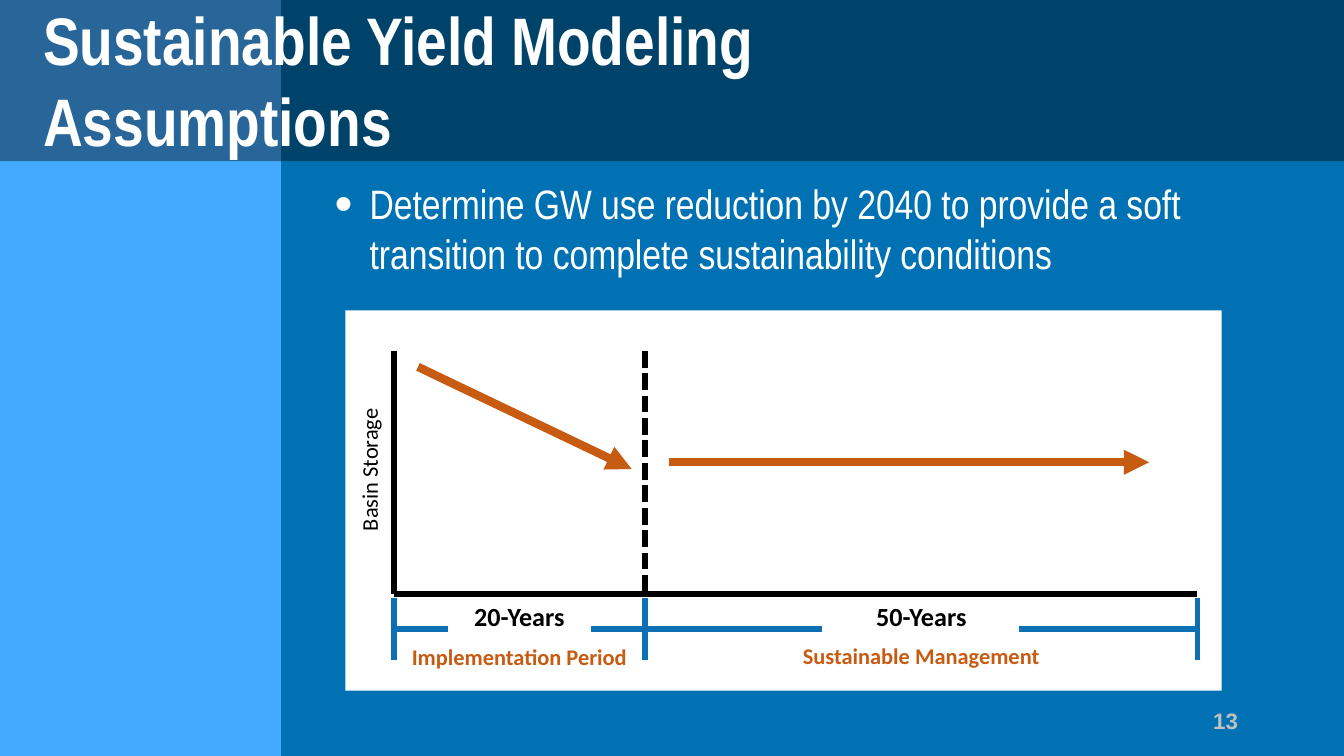
from dataclasses import dataclass

from lxml import etree
from pptx import Presentation
from pptx.dml.color import RGBColor
from pptx.enum import dml, shapes, text
from pptx.oxml import ns
from pptx.util import Inches, Pt


@dataclass(frozen=True)
class Theme:
    back: str = "0071B2"
    side: str = "43AAFF"
    white: str = "FFFFFF"
    black: str = "000000"
    grey: str = "C0C0C0"
    blue: str = "0D70B3"
    orange: str = "C75B12"
    head: str = "Arial Narrow"
    sans: str = "Arial"
    label: str = "Calibri"
    title: float = 36
    body: float = 22
    span: float = 14
    small: float = 12
    rule: float = 3
    trend: float = 4.5


T = Theme()
ALIGN = text.PP_ALIGN
WIDE = 10
HIGH = WIDE * 9 / 16


def add_xml(parent, tag, **attrs):
    return etree.SubElement(parent, ns.qn(tag), attrs)


def add_rect(slide, box, color, alpha=None):
    rect = slide.shapes.add_shape(
        shapes.MSO_SHAPE.RECTANGLE, *map(Inches, box))
    rect.shadow.inherit = False
    rect.fill.solid()
    rect.fill.fore_color.rgb = RGBColor.from_string(color)
    rect.line.fill.background()
    if alpha is not None:
        fill = rect.fill._xPr.find(ns.qn("a:solidFill"))
        add_xml(fill[0], "a:alpha", val=str(alpha * 1000))


def add_line(slide, start, end, color, width=T.rule, dash=None, arrow=False):
    line = slide.shapes.add_connector(
        shapes.MSO_CONNECTOR.STRAIGHT, *map(Inches, (*start, *end)))
    line.line.color.rgb = RGBColor.from_string(color)
    line.line.width = Pt(width)
    if dash:
        line.line.dash_style = dash
    if arrow:
        add_xml(line.line._ln, "a:tailEnd", type="triangle")
    add_xml(line._element.spPr, "a:effectLst")


def add_text(slide, box, words, *, size, font, color, bold=False,
             align=ALIGN.LEFT, anchor=text.MSO_ANCHOR.TOP,
             inset=(0.1, 0.05), turn=0, bullet=False):
    shape = slide.shapes.add_textbox(*map(Inches, box))
    shape.rotation = turn
    frame = shape.text_frame
    frame.word_wrap = True
    frame.vertical_anchor = anchor
    frame.margin_left = frame.margin_right = Inches(inset[0])
    frame.margin_top = frame.margin_bottom = Inches(inset[1])
    para = frame.paragraphs[0]
    para.alignment = align
    if bullet:
        props = para._p.get_or_add_pPr()
        props.set("marL", str(Inches(0.52)))
        props.set("indent", str(Inches(-0.26)))
        tint = add_xml(props, "a:buClr")
        add_xml(tint, "a:srgbClr", val=color)
        add_xml(props, "a:buSzPct", val="125000")
        add_xml(props, "a:buFont", typeface=T.sans)
        add_xml(props, "a:buChar", char="•")
    run = para.add_run()
    run.text = words
    run.font.size = Pt(size)
    run.font.name = font
    run.font.bold = bold
    run.font.color.rgb = RGBColor.from_string(color)


def add_frame(slide, box):
    """Background, side band, title band and page number."""
    x, y, w, h = box
    slide.background.fill.solid()
    slide.background.fill.fore_color.rgb = RGBColor.from_string(T.back)
    add_rect(slide, (x, y, 2.09, h), T.side)
    add_rect(slide, (x, y, w, 1.2), T.black, alpha=40)
    add_text(slide, (x + 0.28, y + 0.12, 6.65, 0.94),
             "Sustainable Yield Modeling Assumptions",
             size=T.title, font=T.head, color=T.white, bold=True,
             anchor=text.MSO_ANCHOR.MIDDLE, inset=(0.04, 0.02))
    add_text(slide, (x + w - 2.94, y + h - 0.41, 2.25, 0.3), "13",
             size=T.small, font=T.sans, color=T.grey, bold=True,
             align=ALIGN.RIGHT)


def add_body(slide, box):
    add_text(slide, box,
             "Determine GW use reduction by 2040 to provide a soft "
             "transition to complete sustainability conditions",
             size=T.body, font=T.head, color=T.white,
             inset=(0.04, 0.02), bullet=True)


def add_span(slide, left, right, top, years, gap, name, drop, inset):
    """Dimension line broken by a gap, with its length and name."""
    mid = top + 0.26
    for start, end in ((left, gap[0]), (gap[1], right)):
        add_line(slide, (start, mid), (end, mid), T.blue)
    style = dict(font=T.label, bold=True, align=ALIGN.CENTER)
    add_text(slide, (left, top, right - left, 0.45), years,
             size=T.span, color=T.black, **style)
    add_text(slide, (left, top + drop, right - left, 0.3), name,
             size=T.small, color=T.orange, inset=(inset, 0.05), **style)


def add_diagram(slide, box):
    """Basin storage over the two planning periods."""
    x, y, w, h = box
    left, split, right = x + 0.36, x + 2.23, x + w - 0.18
    top, base = y + 0.3, y + 2.11
    add_rect(slide, box, T.white)
    add_line(slide, (left, top), (left, base), T.black)
    add_line(slide, (left, base), (right, base), T.black)
    add_line(slide, (split, top), (split, base), T.black,
             dash=dml.MSO_LINE.SQUARE_DOT)
    for tick in (left, split, right):
        add_line(slide, (tick, base + 0.03), (tick, base + 0.49), T.blue)
    add_span(slide, left, split, base, "20-Years",
             (left + 0.4, split - 0.4), "Implementation Period", 0.32, 0)
    add_span(slide, split, right, base, "50-Years",
             (split + 1.32, right - 1.33), "Sustainable Management", 0.31, 0.1)
    for start, end in (((left + 0.18, top + 0.12), (split - 0.1, top + 0.88)),
                       ((split + 0.18, top + 0.83),
                        (right - 0.36, top + 0.83))):
        add_line(slide, start, end, T.orange, width=T.trend, arrow=True)
    add_text(slide, (x - 0.73, y + 1.05, 1.81, 0.27), "Basin Storage",
             size=T.small, font=T.label, color=T.black, align=ALIGN.CENTER,
             anchor=text.MSO_ANCHOR.MIDDLE, inset=(0, 0), turn=270)


def main():
    deck = Presentation()
    deck.slide_width, deck.slide_height = Inches(WIDE), Inches(HIGH)
    slide = deck.slides.add_slide(deck.slide_layouts[6])
    add_frame(slide, (0, 0, WIDE, HIGH))
    add_body(slide, (2.19, 1.31, 7.68, 2.27))
    add_diagram(slide, (2.57, 2.31, 6.52, 2.83))
    deck.save("out.pptx")


if __name__ == "__main__":
    main()
